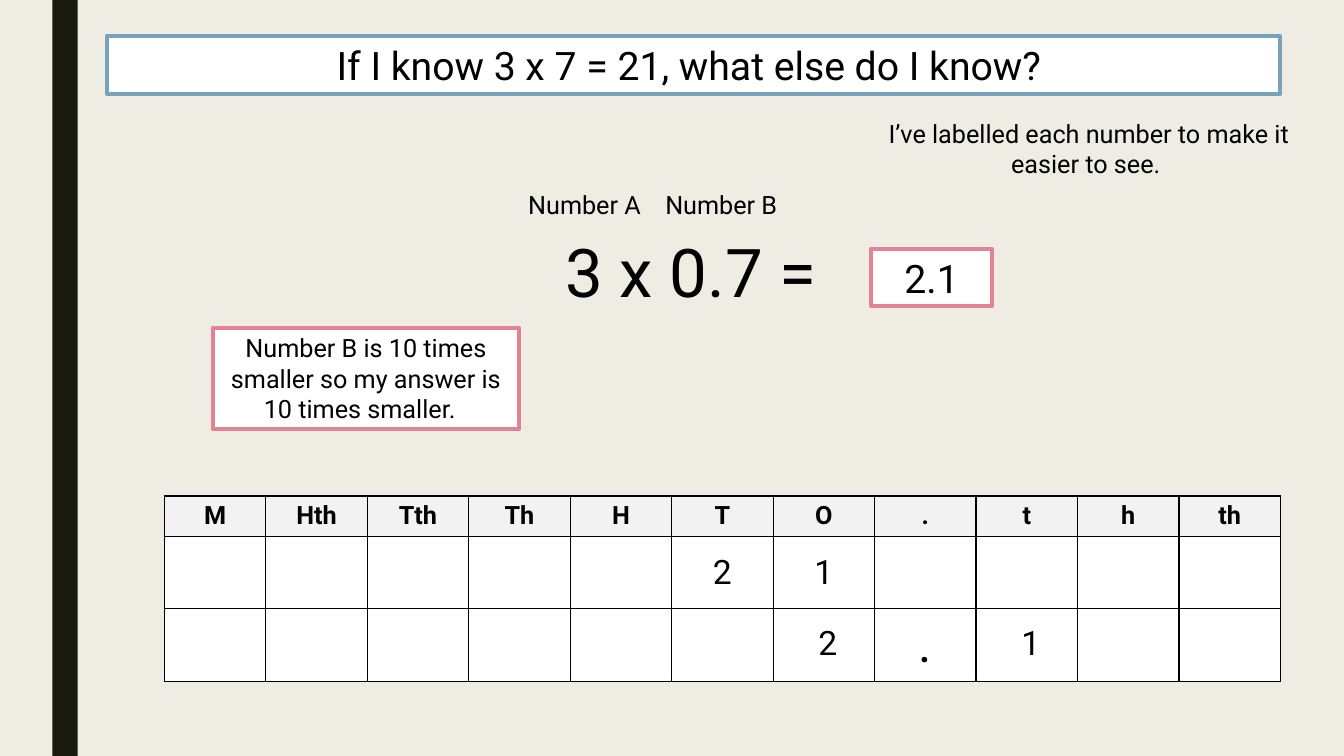
from dataclasses import dataclass

from lxml.etree import SubElement
from pptx import Presentation
from pptx.dml.color import RGBColor
from pptx.enum.shapes import MSO_SHAPE as Preset
from pptx.enum.text import MSO_ANCHOR as Anchor, PP_ALIGN as Align
from pptx.oxml.ns import qn
from pptx.util import Inches, Pt


@dataclass(frozen=True)
class Theme:
    font: str = "Roboto"
    background: str = "EFEDE3"
    stripe: str = "191B0E"
    ink: str = "000000"
    paper: str = "FFFFFF"
    header: str = "F2F2F2"
    question: str = "77A2BB"
    answer: str = "E28394"
    outline: float = 2.75
    grid: float = 1
    body: int = 18
    digit: int = 24
    heading: int = 28
    point: int = 36
    sum: int = 48


THEME = Theme()
COLUMNS = ["M", "Hth", "Tth", "Th", "H", "T", "O", ".", "t", "h", "th"]
ROW_HEIGHTS = [0.4, 0.72, 0.72]


def color(value):
    return RGBColor.from_string(value)


def paint(part, value):
    part.fill.solid()
    part.fill.fore_color.rgb = color(value)


def write(frame, text, size, align=Align.CENTER, bold=False):
    paragraph = frame.paragraphs[0]
    paragraph.alignment = align
    run = paragraph.add_run()
    run.text = text
    run.font.name = THEME.font
    run.font.size = Pt(size)
    run.font.bold = bold
    run.font.color.rgb = color(THEME.ink)


def add_stripe(slide, box):
    stripe = slide.shapes.add_shape(Preset.RECTANGLE, *map(Inches, box))
    stripe.shadow.inherit = False
    paint(stripe, THEME.stripe)
    stripe.line.fill.background()


def add_card(slide, box, text, size, border):
    card = slide.shapes.add_shape(Preset.RECTANGLE, *map(Inches, box))
    card.shadow.inherit = False
    paint(card, THEME.paper)
    card.line.color.rgb = color(border)
    card.line.width = Pt(THEME.outline)
    card.text_frame.word_wrap = True
    card.text_frame.vertical_anchor = Anchor.TOP
    write(card.text_frame, text, size)


def add_label(slide, box, text, size, align=Align.LEFT, wrap=False):
    label = slide.shapes.add_textbox(*map(Inches, box))
    label.text_frame.word_wrap = wrap
    write(label.text_frame, text, size, align)


def add_calculation(slide, box):
    left, top, width, height = box
    for offset, name in ((0, "Number A"), (1.36, "Number B")):
        add_label(slide, (left + offset, top, 1.33, 0.4), name, THEME.body)
    add_label(slide, (left + 0.37, top + 0.41, 2.91, 0.91), "3 x 0.7 =", THEME.sum)
    add_card(slide, (left + width - 1.2, top + 0.64, 1.2, 0.57), "2.1",
             THEME.heading, THEME.answer)


def border_cell(cell):
    properties = cell._tc.get_or_add_tcPr()
    for index, side in enumerate(("a:lnL", "a:lnR", "a:lnT", "a:lnB")):
        line = properties.makeelement(qn(side), {"w": str(Pt(THEME.grid))})
        fill = SubElement(line, qn("a:solidFill"))
        SubElement(fill, qn("a:srgbClr"), val=THEME.ink)
        properties.insert(index, line)


def add_place_value_grid(slide, box):
    left, top, width, height = box
    grid = slide.shapes.add_table(
        len(ROW_HEIGHTS), len(COLUMNS), *map(Inches, box)).table
    column_width = width / len(COLUMNS)
    for column in grid.columns:
        column.width = Inches(column_width)
    for row, row_height in zip(grid.rows, ROW_HEIGHTS):
        row.height = Inches(row_height)
    for cell in grid.iter_cells():
        paint(cell, THEME.paper)
        border_cell(cell)
    for index, place in enumerate(COLUMNS):
        heading = grid.cell(0, index)
        paint(heading, THEME.header)
        write(heading.text_frame, place, THEME.body, bold=True)

    entries = (
        (1, "T", "2", THEME.digit),
        (1, "O", "1", THEME.digit),
        (2, ".", ".", THEME.point),
    )
    for row, place, text, size in entries:
        cell = grid.cell(row, COLUMNS.index(place))
        cell.vertical_anchor = Anchor.MIDDLE
        write(cell.text_frame, text, size)

    for place, digit in (("O", "2"), ("t", "1")):
        digit_left = left + COLUMNS.index(place) * column_width + 0.35
        add_label(slide, (digit_left, top + 1.2, 0.4, 0.5), digit, THEME.digit)


def build_slide(deck):
    slide = deck.slides.add_slide(deck.slide_layouts[6])
    paint(slide.background, THEME.background)
    add_stripe(slide, (0.52, 0, 0.25, 7.5))
    add_card(slide, (1.06, 0.36, 11.64, 0.57),
             "If I know 3 x 7 = 21, what else do I know? ",
             THEME.heading, THEME.question)
    add_place_value_grid(slide, (1.63, 4.92, 11.07, sum(ROW_HEIGHTS)))
    add_calculation(slide, (5.14, 1.83, 4.7, 1.32))
    add_label(slide, (8.65, 1.12, 4.3, 0.71),
              "I’ve labelled each number to make it easier to see. ",
              THEME.body, Align.CENTER, True)
    add_card(slide, (2.11, 3.25, 3.04, 1.01),
             "Number B is 10 times smaller so my answer is 10 times smaller.  ",
             THEME.body, THEME.answer)


def main():
    deck = Presentation()
    deck.slide_width = Inches(13.33)
    deck.slide_height = Inches(7.5)
    build_slide(deck)
    deck.save("out.pptx")


if __name__ == "__main__":
    main()
